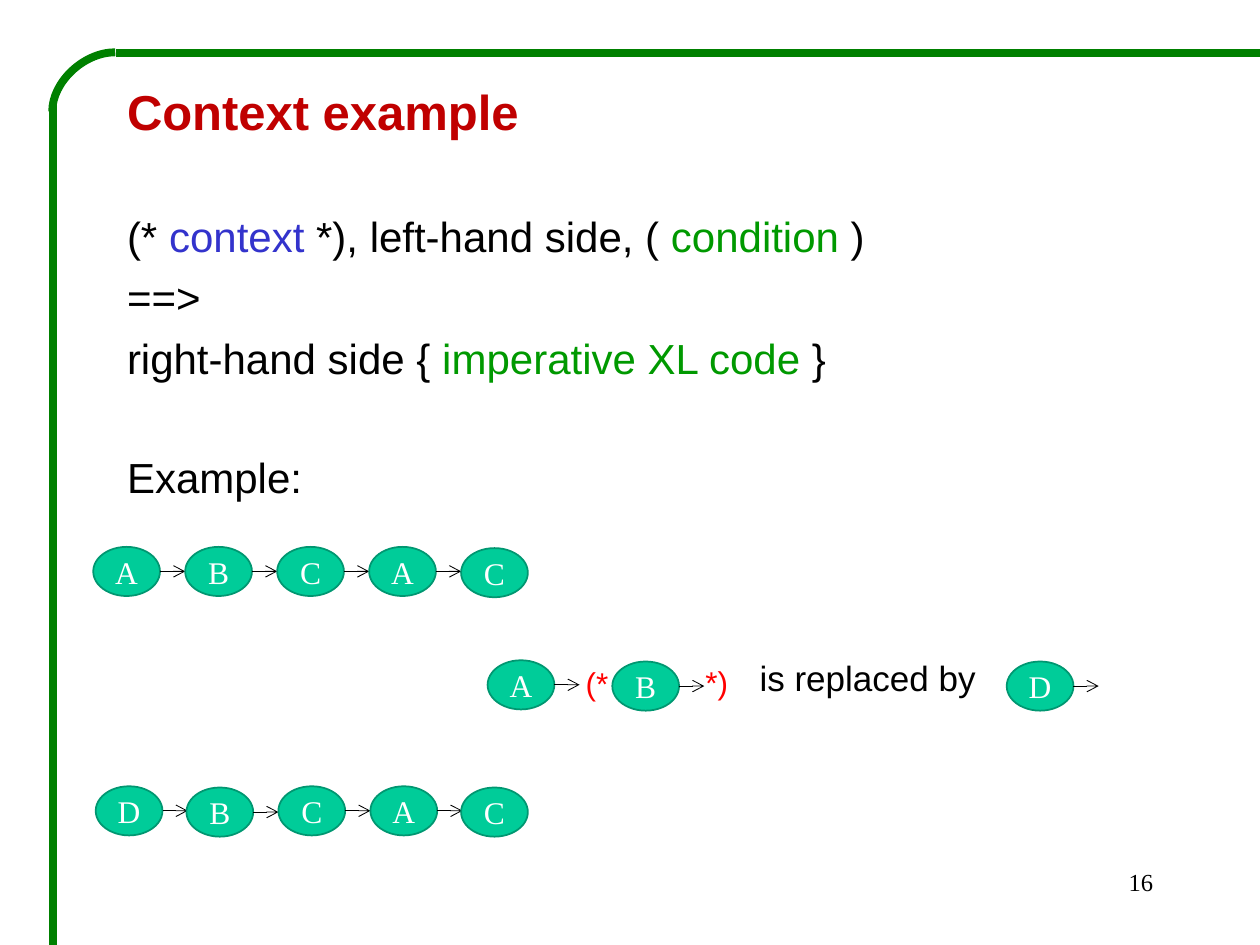
from dataclasses import dataclass

from lxml import etree
from pptx import Presentation
from pptx.dml.color import RGBColor
from pptx.enum.shapes import MSO_CONNECTOR, MSO_SHAPE
from pptx.enum.text import MSO_ANCHOR, PP_ALIGN
from pptx.oxml.ns import qn
from pptx.util import Inches, Pt

STRAIGHT = MSO_CONNECTOR.STRAIGHT
CURVE = MSO_CONNECTOR.CURVE
OVAL = MSO_SHAPE.OVAL
MIDDLE = MSO_ANCHOR.MIDDLE
LEFT, CENTER, RIGHT = PP_ALIGN.LEFT, PP_ALIGN.CENTER, PP_ALIGN.RIGHT

COLORS = {
    "title": "C00000",
    "text": "000000",
    "context": "3333CC",
    "code": "009900",
    "marker": "FF0000",
    "node": "00CC99",
    "node_line": "009771",
    "letter": "FFFFFF",
    "frame": "008000",
}
SANS, SERIF = "Arial", "Times New Roman"
NODE_W, NODE_H, ARROW_LEN = 0.53, 0.39, 0.2
STEP = NODE_W + ARROW_LEN


@dataclass
class Node:
    letter: str
    x: float
    y: float
    arrow: bool = True


@dataclass
class Label:
    text: str
    x: float
    y: float
    w: float
    h: float
    size: int
    color: str = "text"
    font: str = SANS
    align: PP_ALIGN = LEFT
    wrap: bool = False


@dataclass
class Line:
    runs: list[tuple[str, str]]
    before: float = 6
    size: int = 24
    bold: bool = False


def rgb(name: str) -> RGBColor:
    return RGBColor.from_string(COLORS[name])


def add_line(s, kind, x1: float, y1: float, x2: float, y2: float, color: str, width: float):
    c = s.shapes.add_connector(kind, Inches(x1), Inches(y1), Inches(x2), Inches(y2))
    c.line.color.rgb = rgb(color)
    c.line.width = Pt(width)
    etree.SubElement(c._element.spPr, qn("a:effectLst"))
    return c


def add_arrow(s, x: float, y: float) -> None:
    c = add_line(s, STRAIGHT, x, y, x + ARROW_LEN, y, "text", 0.5)
    etree.SubElement(c.line._get_or_add_ln(), qn("a:tailEnd"), type="arrow")


def add_node(s, node: Node) -> None:
    sp = s.shapes.add_shape(OVAL, Inches(node.x), Inches(node.y), Inches(NODE_W), Inches(NODE_H))
    sp.shadow.inherit = False
    sp.fill.solid()
    sp.fill.fore_color.rgb = rgb("node")
    sp.line.color.rgb = rgb("node_line")
    sp.line.width = Pt(1)
    tf = sp.text_frame
    tf.word_wrap = False
    tf.vertical_anchor = MIDDLE
    p = tf.paragraphs[0]
    p.text = node.letter
    p.alignment = CENTER
    p.font.size = Pt(18)
    p.font.name = SERIF
    p.font.color.rgb = rgb("letter")
    if node.arrow:
        add_arrow(s, node.x + NODE_W, node.y + NODE_H / 2)


def add_label(s, label: Label) -> None:
    box = s.shapes.add_textbox(Inches(label.x), Inches(label.y), Inches(label.w), Inches(label.h))
    tf = box.text_frame
    tf.word_wrap = label.wrap
    p = tf.paragraphs[0]
    p.text = label.text
    p.alignment = label.align
    p.font.size = Pt(label.size)
    p.font.name = label.font
    p.font.color.rgb = rgb(label.color)


def add_body(s, lines: list[Line]) -> None:
    tf = s.shapes.add_textbox(Inches(0.91), Inches(0.6), Inches(6.69), Inches(3.55)).text_frame
    tf.word_wrap = True
    for i, line in enumerate(lines):
        p = tf.add_paragraph() if i else tf.paragraphs[0]
        p.space_before = Pt(line.before)
        p.font.size = Pt(line.size)
        p.font.name = SANS
        p.font.bold = line.bold
        for text, color in line.runs:
            r = p.add_run()
            r.text = text
            r.font.color.rgb = rgb(color)


def add_frame(s) -> None:
    add_line(s, STRAIGHT, 10, 0.42, 0.92, 0.42, "frame", 4.5)
    add_line(s, STRAIGHT, 0.42, 0.83, 0.42, 7.5, "frame", 4.5)
    corner = add_line(s, CURVE, 0.43, 0.4, 0.9, 0.9, "frame", 4.5)
    sp_pr = corner._element.spPr
    sp_pr.find(qn("a:prstGeom")).set("prst", "curvedConnector2")
    sp_pr.find(qn("a:xfrm")).set("rot", str(270 * 60000))


BODY = [
    Line([("Context example", "title")], before=3, size=28, bold=True),
    Line([("(* ", "text"), ("context", "context"), (" *), left-hand side, ( ", "text"),
          ("condition", "code"), (" )", "text")], before=40),
    Line([("==>", "text")]),
    Line([("right-hand side { ", "text"), ("imperative XL code ", "code"), ("}", "text")]),
    Line([("Example:", "text")], before=39.5),
]
NODES = [
    *[Node(letter, 0.74 + i * STEP, 4.34) for i, letter in enumerate("ABCA")],
    Node("C", 3.66, 4.35, arrow=False),
    Node("A", 3.87, 5.24),
    Node("B", 4.86, 5.25),
    Node("D", 7.99, 5.25),
    Node("D", 0.76, 6.24),
    Node("B", 1.48, 6.25),
    Node("C", 2.21, 6.24),
    Node("A", 2.94, 6.24),
    Node("C", 3.66, 6.25, arrow=False),
]
LABELS = [
    Label("is replaced by", 5.93, 5.16, 1.93, 0.44, 20),
    Label("(*", 4.55, 5.22, 0.38, 0.4, 18, "marker"),
    Label("*)", 5.5, 5.21, 0.38, 0.4, 18, "marker"),
    Label("16", 7.17, 6.83, 2.08, 0.5, 14, font=SERIF, align=RIGHT, wrap=True),
]


def main() -> None:
    prs = Presentation()
    prs.slide_width, prs.slide_height = Inches(10), Inches(7.5)
    s = prs.slides.add_slide(prs.slide_layouts[6])
    add_frame(s)
    add_body(s, BODY)
    for node in NODES:
        add_node(s, node)
    for label in LABELS:
        add_label(s, label)
    prs.save("out.pptx")


if __name__ == "__main__":
    main()
